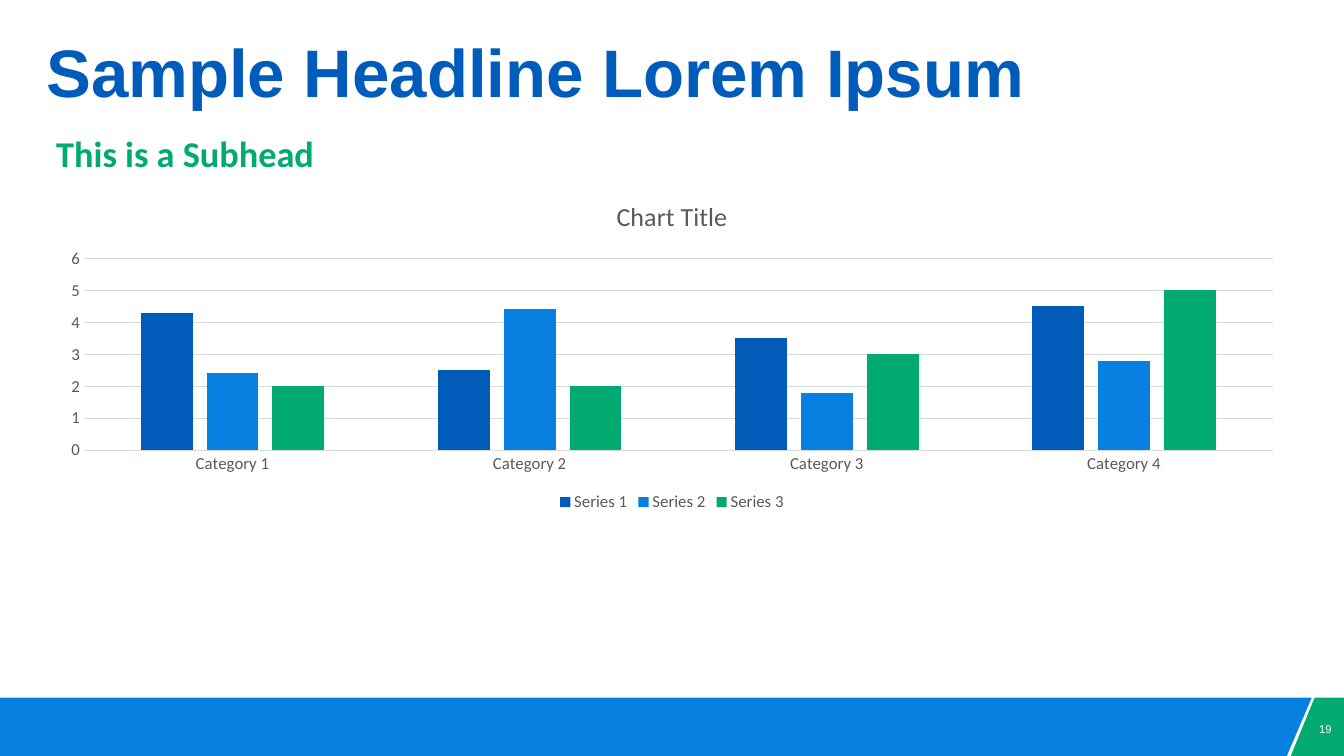
from lxml.etree import SubElement
from pptx import Presentation
from pptx.chart.data import CategoryChartData
from pptx.dml.color import RGBColor
from pptx.enum.chart import XL_CHART_TYPE, XL_LEGEND_POSITION, XL_TICK_MARK
from pptx.enum.text import MSO_ANCHOR, PP_ALIGN
from pptx.oxml.ns import qn
from pptx.util import Inches, Pt

COLORS = {
    "headline": "005CBA",
    "navy": "005BB9",
    "blue": "0780E2",
    "green": "00AA71",
    "white": "FFFFFF",
    "label": "595959",
    "rule": "D9D9D9",
}


class Deck:
    """Places elements by percent of the slide's width and height."""

    def __init__(self):
        self.prs = Presentation()
        self.prs.slide_width = Inches(13.33)
        self.prs.slide_height = Inches(7.5)
        self.s = self.prs.slides.add_slide(self.prs.slide_layouts[6])

    def x(self, percent):
        return round(self.prs.slide_width * percent / 100)

    def y(self, percent):
        return round(self.prs.slide_height * percent / 100)

    def box(self, left, top, width, height):
        return self.x(left), self.y(top), self.x(width), self.y(height)

    def color(self, name):
        return RGBColor.from_string(COLORS[name])

    def font(self, font, size, color, name="Calibri", bold=False):
        font.size = Pt(size)
        font.name = name
        font.bold = bold
        font.color.rgb = self.color(color)

    def rule(self, line):
        line.color.rgb = self.color("rule")
        line.width = Pt(0.75)

    def polygon(self, points, color):
        corners = [(self.x(px), self.y(py)) for px, py in points]
        builder = self.s.shapes.build_freeform(*corners[0])
        builder.add_line_segments(corners[1:], close=True)
        sp = builder.convert_to_shape()
        sp.shadow.inherit = False
        sp.fill.solid()
        sp.fill.fore_color.rgb = self.color(color)
        sp.line.fill.background()

    def text(self, text, place, size, color, name="Arial", bold=False,
             spacing=1.0, inset=(0, 0), align=PP_ALIGN.LEFT, anchor=MSO_ANCHOR.TOP):
        tf = self.s.shapes.add_textbox(*self.box(*place)).text_frame
        tf.word_wrap = True
        tf.vertical_anchor = anchor
        tf.margin_left = tf.margin_right = Inches(inset[0])
        tf.margin_top = tf.margin_bottom = Inches(inset[1])
        tf.text = text
        p = tf.paragraphs[0]
        p.alignment = align
        p.line_spacing = spacing
        self.font(p.runs[0].font, size, color, name, bold)

    def columns(self, title, place, categories, series):
        data = CategoryChartData()
        data.categories = categories
        for name, values, _ in series:
            data.add_series(name, values)
        chart = self.s.shapes.add_chart(
            XL_CHART_TYPE.COLUMN_CLUSTERED, *self.box(*place), data).chart
        self.font(chart.font, 12, "label")

        chart.has_title = True
        tf = chart.chart_title.text_frame
        tf.text = title
        self.font(tf.paragraphs[0].runs[0].font, 18.6, "label")
        chart.chart_title.include_in_layout = False

        chart.has_legend = True
        chart.legend.position = XL_LEGEND_POSITION.BOTTOM
        chart.legend.include_in_layout = False
        self.font(chart.legend.font, 12, "label")

        for axis in (chart.category_axis, chart.value_axis):
            axis.major_tick_mark = axis.minor_tick_mark = XL_TICK_MARK.NONE
            self.font(axis.tick_labels.font, 12, "label")
        self.rule(chart.category_axis.format.line)
        chart.value_axis.format.line.fill.background()
        self.rule(chart.value_axis.major_gridlines.format.line)
        chart.value_axis.tick_labels.number_format = "General"
        chart.value_axis.tick_labels.number_format_is_linked = False

        plot = chart.plots[0]
        plot.vary_by_categories = False
        plot.gap_width = 219
        plot.overlap = -27
        for bars, (_, _, color) in zip(plot.series, series):
            bars.format.fill.solid()
            bars.format.fill.fore_color.rgb = self.color(color)


def main():
    deck = Deck()
    left, width = 3.45, 93.1
    top, bottom = 92.27, 100.4

    deck.polygon([(-0.08, top), (97.6, top), (95.65, bottom), (-0.08, bottom)], "blue")
    deck.polygon([(100.7, top), (97.82, top), (95.95, bottom), (100.7, bottom)], "green")
    deck.text("Sample Headline Lorem Ipsum", (left, 5.2, width, 9.73), 48,
              "headline", bold=True, spacing=0.9)
    deck.columns(
        "Chart Title", (left, 24, width, 44.27),
        [f"Category {n}" for n in range(1, 5)],
        [("Series 1", (4.3, 2.5, 3.5, 4.5), "navy"),
         ("Series 2", (2.4, 4.4, 1.8, 2.8), "blue"),
         ("Series 3", (2, 2, 3, 5), "green")])
    deck.text("19", (97.3, 93.73, 2.63, 5.33), 8, "white",
              align=PP_ALIGN.CENTER, anchor=MSO_ANCHOR.MIDDLE)
    deck.text("This is a Subhead", (left, 18.27, width, 5.73), 25.9, "green",
              name="Calibri", bold=True, spacing=0.7, inset=(0.1, 0.05))
    deck.prs.save("out.pptx")


if __name__ == "__main__":
    main()
